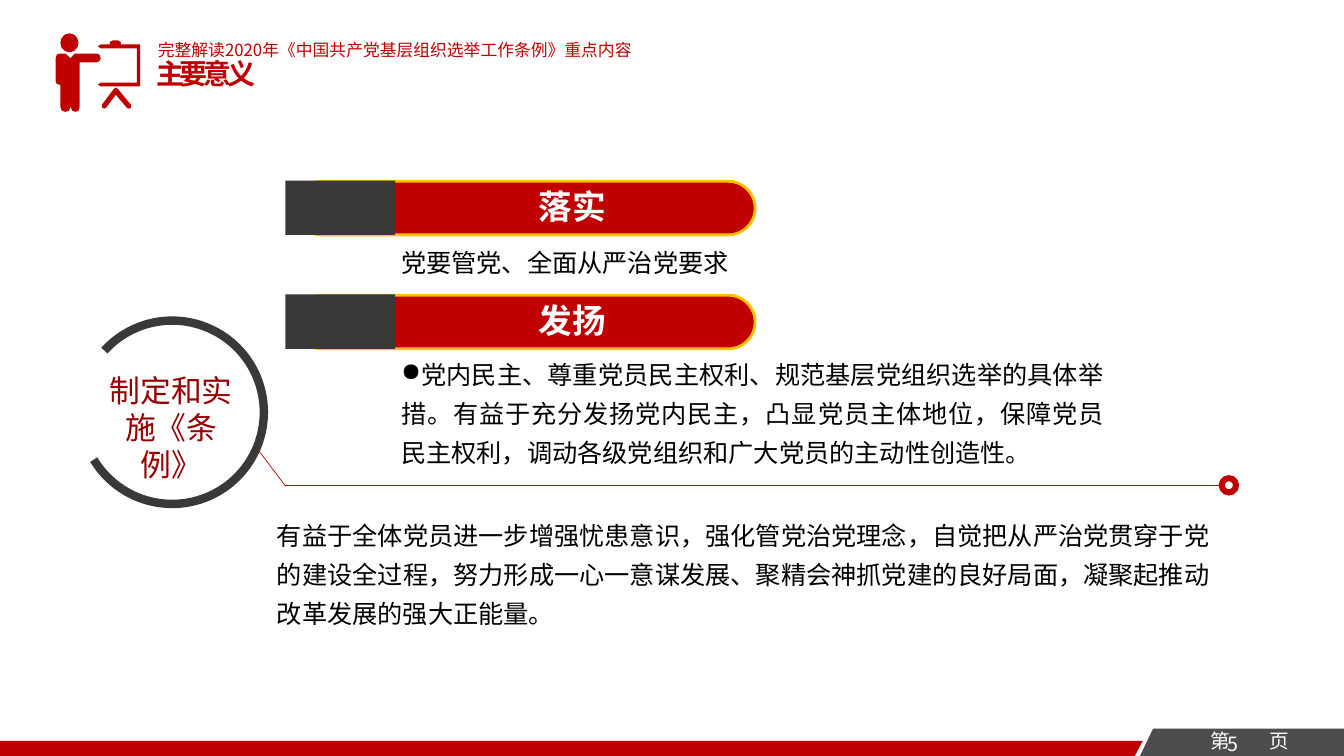
"""Build the slide on the meaning of the election rules."""
from pptx import Presentation
from pptx.dml.color import RGBColor
from pptx.enum.shapes import MSO_CONNECTOR, MSO_SHAPE
from pptx.enum.text import MSO_ANCHOR, MSO_AUTO_SIZE, PP_ALIGN
from pptx.oxml.ns import qn
from pptx.util import Cm, Pt
from lxml import etree

RED = RGBColor(0xC0, 0x00, 0x00)
PILL = RGBColor(0xC1, 0x00, 0x01)
WINE = RGBColor(0x96, 0x00, 0x00)
GOLD = RGBColor(0xFF, 0xC0, 0x00)
DARK = RGBColor(0x3B, 0x38, 0x38)
GRAY = RGBColor(0x4D, 0x4D, 0x4D)
WHITE = RGBColor(0xFF, 0xFF, 0xFF)
BLACK = RGBColor(0x00, 0x00, 0x00)
FONT = "Noto Sans CJK SC"

deck = Presentation()
deck.slide_width, deck.slide_height = Cm(33.87), Cm(19.05)
slide = deck.slides.add_slide(deck.slide_layouts[5])
shapes = slide.shapes


def write(text, box, size=18, color=BLACK, bold=False, align=PP_ALIGN.JUSTIFY,
          anchor=MSO_ANCHOR.TOP, wrap=True, lead=None, space=None, mark=None, item=None):
    item = item or shapes.add_textbox(0, 0, 0, 0)
    item.left, item.top, item.width, item.height = map(Cm, box)
    frame = item.text_frame
    frame.word_wrap, frame.vertical_anchor = wrap, anchor
    frame.auto_size = MSO_AUTO_SIZE.NONE
    para = frame.paragraphs[0]
    para.alignment = align
    if lead:
        para.line_spacing = lead
    if mark:
        props = para._p.get_or_add_pPr()
        props.set("marL", "0")
        props.set("indent", str(-Cm(0.79)))
        etree.SubElement(props, qn("a:buChar")).set("char", mark)
    run = para.add_run()
    run.text = text
    font = run.font
    font.name, font.size, font.bold = FONT, Pt(size), bold
    font.color.rgb = color
    props = run._r.get_or_add_rPr()
    etree.SubElement(props, qn("a:ea")).set("typeface", FONT)
    if space:
        props.set("spc", str(space * 100))


def paint(item, fill=None, line=None, width=1):
    item.shadow.inherit = False
    if fill is None:
        item.fill.background()
    else:
        item.fill.solid()
        item.fill.fore_color.rgb = fill
    if line is None:
        item.line.fill.background()
    else:
        item.line.color.rgb = line
        item.line.width = Pt(width)


write("主要意义", (3.68, 1.3, 3.68, 1.12), size=20, color=RED, bold=True, space=-3,
      item=shapes.title)
write("完整解读2020年《中国共产党基层组织选举工作条例》重点内容", (3.73, 0.56, 19.53, 1.4),
      size=12, color=RED, align=PP_ALIGN.LEFT, anchor=MSO_ANCHOR.MIDDLE)

stripe = [(0, 1905), (2860, 1905), (2880, 1867), (0, 1867)]
corner = [(2906, 1836), (2873, 1905), (3387, 1905), (3387, 1836)]
body = [(244, 135), (188, 135), (178, 147), (165, 135), (150, 135), (143, 138),
        (140, 147), (140, 203), (143, 212), (152, 214), (152, 269), (156, 279),
        (165, 282), (174, 279), (178, 269), (182, 279), (190, 282), (198, 279),
        (201, 269), (201, 157), (244, 157), (251, 154), (254, 147), (251, 138)]
board = [(353, 112), (304, 112), (305, 106), (297, 102), (284, 102), (277, 106),
         (277, 112), (254, 112), (247, 117), (254, 122), (345, 122), (345, 208),
         (254, 208), (247, 213), (254, 218), (353, 218)]
legs = [(330, 264), (297, 224), (292, 221), (287, 224), (257, 264), (257, 270),
        (262, 274), (267, 272), (292, 239), (320, 272), (325, 274), (330, 271)]
for points, color in [(stripe, RED), (corner, GRAY), (body, RED), (board, RED), (legs, RED)]:
    pen = shapes.build_freeform(*points[0], scale=Cm(0.01))
    pen.add_line_segments(points[1:], close=True)
    paint(pen.convert_to_shape(), color)
head = shapes.add_shape(MSO_SHAPE.OVAL, Cm(1.52), Cm(0.84), Cm(0.46), Cm(0.48))
paint(head, RED)

for text, left, top in [("第", 30.15, 18.24), ("5", 30.47, 18.31), ("页", 31.65, 18.24)]:
    write(text, (left, top, 1.2, 0.8), size=14, color=WHITE, align=PP_ALIGN.CENTER)

ring = shapes.add_shape(MSO_SHAPE.ARC, Cm(2.03), Cm(8.08), Cm(4.62), Cm(4.62))
ring.adjustments[0], ring.adjustments[1] = 133.37, 89.33
paint(ring, line=DARK, width=6)
write("制定和实施《条例》", (2.26, 9.25, 4.11, 2.13), size=22, color=WINE,
      align=PP_ALIGN.CENTER)

for ends in [(6.5, 11.33, 7.19, 12.24), (7.19, 12.24, 30.73, 12.24)]:
    link = shapes.add_connector(MSO_CONNECTOR.STRAIGHT, *map(Cm, ends))
    link.line.color.rgb = RED
    link.line.width = Pt(0.5)
    etree.SubElement(link._element.spPr, qn("a:effectLst"))
knob = shapes.add_shape(MSO_SHAPE.DONUT, Cm(30.73), Cm(11.99), Cm(0.48), Cm(0.48))
paint(knob, RED, RED)

for row, label in enumerate(["落实", "发扬"]):
    top = 4.57 + 2.87 * row
    pill = shapes.add_shape(MSO_SHAPE.ROUNDED_RECTANGLE, Cm(7.42), Cm(top), Cm(11.61), Cm(1.35))
    pill.adjustments[0] = 0.5
    paint(pill, PILL, GOLD, 2)
    block = shapes.add_shape(MSO_SHAPE.RECTANGLE, Cm(7.19), Cm(top - 0.02), Cm(2.77), Cm(1.37))
    paint(block, DARK)
    write(label, (13.31, top, 2.24, 1.27), size=24, color=WHITE, bold=True,
          align=PP_ALIGN.CENTER, wrap=False)

write("党要管党、全面从严治党要求", (9.86, 5.87, 18.21, 1.17), lead=1.3)
write("党内民主、尊重党员民主权利、规范基层党组织选举的具体举措。有益于充分发扬党内民主，"
      "凸显党员主体地位，保障党员民主权利，调动各级党组织和广大党员的主动性创造性。",
      (9.86, 8.69, 18.21, 3.25), lead=1.3, mark="●")
write("有益于全体党员进一步增强忧患意识，强化管党治党理念，自觉把从严治党贯穿于党的建设全过程，"
      "努力形成一心一意谋发展、聚精会神抓党建的良好局面，凝聚起推动改革发展的强大正能量。",
      (6.73, 12.75, 24, 3.25), lead=1.3)

deck.save("out.pptx")
